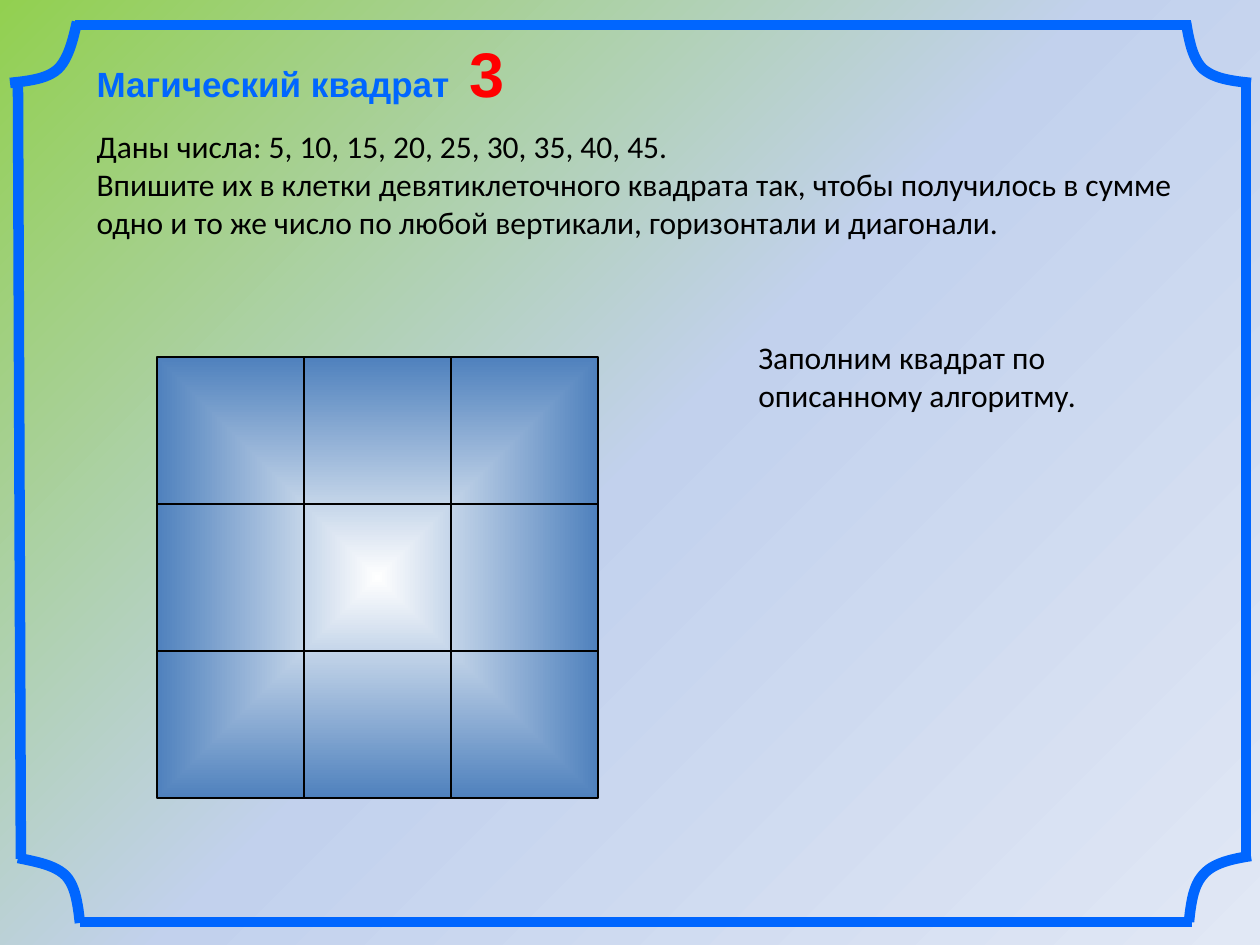
from pptx import Presentation
from pptx.dml.color import RGBColor
from pptx.enum.shapes import MSO_SHAPE as Shape
from pptx.enum.text import MSO_ANCHOR as Anchor, MSO_AUTO_SIZE as Auto, PP_ALIGN as Align
from pptx.oxml import parse_xml
from pptx.oxml.ns import nsdecls, qn
from pptx.util import Pt

PX = 914400 / 126
COLORS = {
    "blue": "0066FF", "red": "FF0000", "black": "000000",
    "green": "92D050", "sky": "C2D1ED", "pale": "E1E8F5",
    "white": "FFFFFF", "steel": "4F81BD",
}
HEAD = [[("Магический квадрат  ", 20, "blue"), ("3", 36, "red")]]
TASK = [
    [("Даны числа: 5, 10, 15, 20, 25, 30, 35, 40, 45.", 18, "black")],
    [("Впишите их в клетки девятиклеточного квадрата так, чтобы получилось в сумме "
      "одно и то же число по любой вертикали, горизонтали и диагонали.", 18, "black")],
]
HINT = [[("Заполним квадрат по описанному алгоритму.", 18, "black")]]

EDGES = [
    [(75, 25), (1191, 25)],
    [(80, 922), (1192, 922)],
    [(1246, 83), (1246, 859)],
    [(18, 83), (21, 859)],
]
CURVES = [
    [(18, 858), (37, 862), (55, 865), (66, 876), (76, 887), (78, 906), (80, 923)],
    [(1251, 856), (1232, 859), (1213, 863), (1203, 875), (1193, 886), (1191, 904), (1189, 922)],
    [(1186, 22), (1189, 39), (1192, 58), (1203, 69), (1215, 79), (1232, 81), (1251, 83)],
    [(77, 22), (73, 39), (69, 58), (58, 69), (47, 79), (29, 81), (10, 83)],
]
GRID_X, GRID_Y, CELL, COUNT = 157, 357, 147, 3
STEPS = 12


def emu(*vals):
    return [round(v * PX) for v in vals]


def rgb(name):
    return RGBColor.from_string(COLORS[name])


def blend(fill, root, stops, tail):
    fill.gradient()
    old = next(root.iter(qn("a:gradFill")))
    marks = "".join(f'<a:gs pos="{pos * 1000}"><a:srgbClr val="{COLORS[name]}"/></a:gs>'
                    for pos, name in stops)
    new = parse_xml(f'<a:gradFill {nsdecls("a")} rotWithShape="1">'
                    f'<a:gsLst>{marks}</a:gsLst>{tail}</a:gradFill>')
    old.getparent().replace(old, new)


def write(shape, paras, box, font="Calibri", bold=False):
    shape.left, shape.top, shape.width, shape.height = emu(*box)
    frame = shape.text_frame
    frame.word_wrap = True
    frame.auto_size = Auto.NONE
    frame.vertical_anchor = Anchor.TOP
    for i, runs in enumerate(paras):
        para = frame.add_paragraph() if i else frame.paragraphs[0]
        para.alignment = Align.LEFT
        para.space_before = Pt(0)
        props = para._p.get_or_add_pPr()
        props.set("marL", "0")
        props.set("indent", "0")
        props.append(parse_xml(f'<a:buNone {nsdecls("a")}/>'))
        for text, size, color in runs:
            run = para.add_run()
            run.text = text
            run.font.size = Pt(size)
            run.font.name = font
            run.font.bold = bold
            run.font.color.rgb = rgb(color)


def square(x, y, side):
    shape = slide.shapes.add_shape(Shape.RECTANGLE, *emu(x, y, side, side))
    shape.shadow.inherit = False
    return shape


def curve(pts):
    out = [pts[0]]
    for i in range(0, len(pts) - 1, 3):
        a, b, c, d = pts[i:i + 4]
        for k in range(1, STEPS + 1):
            t = k / STEPS
            u = 1 - t
            out.append(tuple(u**3 * p + 3 * u * u * t * q + 3 * u * t * t * r + t**3 * s
                             for p, q, r, s in zip(a, b, c, d)))
    return out


def stroke(pts):
    pen = slide.shapes.build_freeform(*emu(*pts[0]), scale=1.0)
    pen.add_line_segments([emu(*pt) for pt in pts[1:]], close=False)
    shape = pen.convert_to_shape()
    shape.shadow.inherit = False
    shape.fill.background()
    shape.line.color.rgb = rgb("blue")
    shape.line.width = Pt(6)


deck = Presentation()
deck.slide_width, deck.slide_height = emu(1260, 945)
slide = deck.slides.add_slide(deck.slide_layouts[1])
blend(slide.background.fill, slide.element,
      [(0, "green"), (50, "sky"), (100, "pale")], '<a:lin ang="2700000" scaled="0"/>')

base = square(GRID_X, GRID_Y, CELL * COUNT)
base.line.fill.background()
blend(base.fill, base.element, [(0, "white"), (100, "steel")],
      '<a:path path="rect"><a:fillToRect l="50000" t="50000" r="50000" b="50000"/></a:path>')
for row in range(COUNT):
    for col in range(COUNT):
        cell = square(GRID_X + col * CELL, GRID_Y + row * CELL, CELL)
        cell.fill.background()
        cell.line.color.rgb = rgb("black")
        cell.line.width = Pt(0.75)

for pts in EDGES + [curve(c) for c in CURVES]:
    stroke(pts)

write(slide.placeholders[1], TASK, (84, 121, 1103, 164))
write(slide.shapes.add_textbox(0, 0, 0, 0), HINT, (746, 332, 420, 88))
write(slide.shapes.title, HEAD, (84, 28, 520, 88), font="Arial", bold=True)

deck.save("out.pptx")
